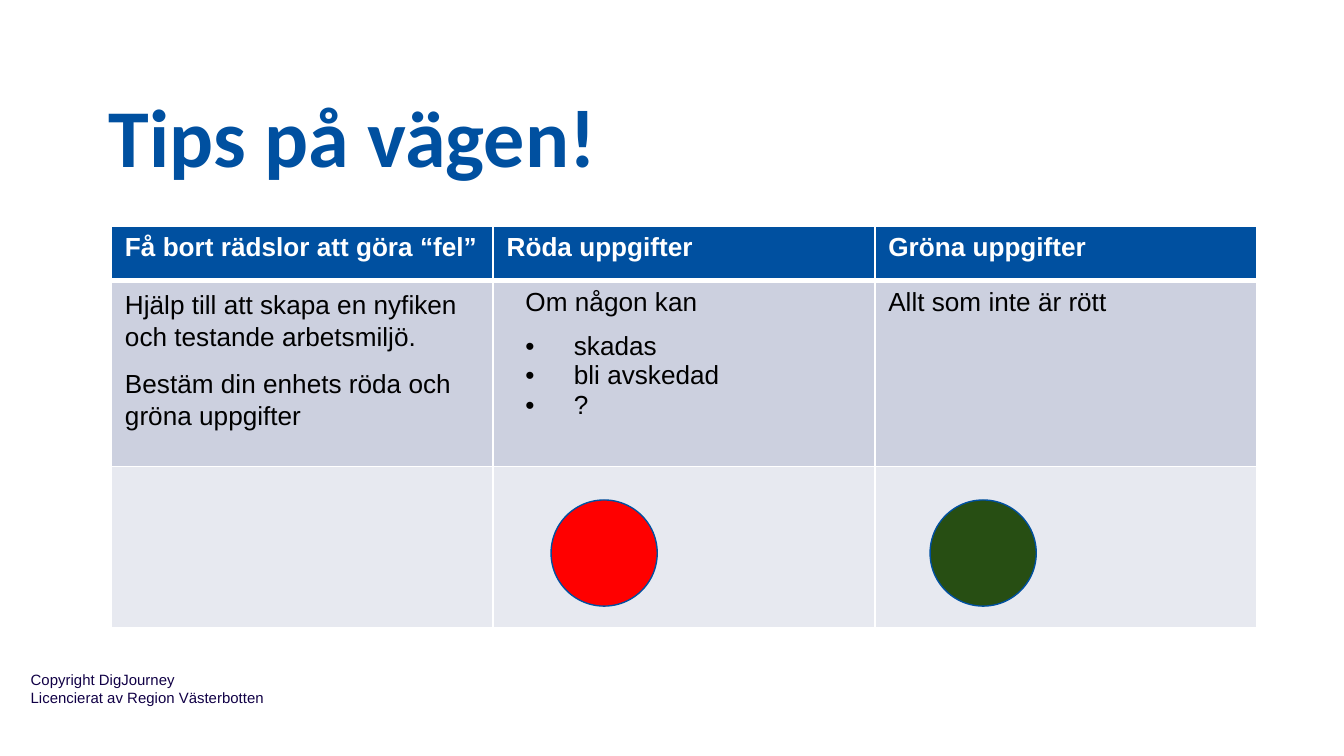
from dataclasses import dataclass

from lxml.etree import SubElement
from pptx import Presentation
from pptx.dml.color import RGBColor
from pptx.enum.shapes import MSO_SHAPE
from pptx.enum.text import MSO_ANCHOR
from pptx.oxml.ns import qn
from pptx.util import Inches, Pt


@dataclass(frozen=True)
class Theme:
    blue: str = "0050A0"
    white: str = "FFFFFF"
    black: str = "000000"
    footer: str = "110046"
    body_fill: str = "CCD0DF"
    signal_fill: str = "E7E9F0"
    red: str = "FF0000"
    green: str = "274E13"
    title_font: str = "Calibri"
    body_font: str = "Arial"
    title_size: int = 44
    body_size: int = 14
    footer_size: int = 8


THEME = Theme()
WIDTH = 10
HEIGHT = WIDTH * 9 / 16
TABLE_LEFT, TABLE_TOP = 0.83, 1.68
COLUMN_WIDTH = 2.84
ROW_HEIGHTS = (0.41, 1.38, 1.2)
CIRCLE_LEFT, CIRCLE_TOP = 4.1, 3.72
CIRCLE_SIZE, CIRCLE_STEP = 0.79, 2.82

HEADINGS = ("Få bort rädslor att göra “fel”", "Röda uppgifter", "Gröna uppgifter")
ADVICE = (
    "Hjälp till att skapa en nyfiken och testande arbetsmiljö.",
    "Bestäm din enhets röda och gröna uppgifter",
)
RISKS = ("skadas", "bli avskedad", "?")


def color(value):
    return RGBColor.from_string(value)


def add_span(paragraph, text, size, ink, font=THEME.body_font, bold=False):
    span = paragraph.add_run()
    span.text = text
    span.font.name = font
    span.font.size = Pt(size)
    span.font.bold = bold
    span.font.color.rgb = color(ink)


def next_paragraph(frame):
    first = frame.paragraphs[0]
    return frame.add_paragraph() if first.runs else first


def add_box(page, left, top, width, height, inset, anchor=MSO_ANCHOR.TOP):
    box = page.shapes.add_textbox(Inches(left), Inches(top), Inches(width), Inches(height))
    frame = box.text_frame
    frame.word_wrap = True
    frame.vertical_anchor = anchor
    frame.margin_left = frame.margin_right = Inches(inset)
    frame.margin_top = frame.margin_bottom = Inches(inset)
    return frame


def add_cell_text(cell, text, ink=THEME.black, bold=False):
    paragraph = next_paragraph(cell.text_frame)
    add_span(paragraph, text, THEME.body_size, ink, bold=bold)
    return paragraph


def set_indent(paragraph, margin, first_line=0, bullet=False):
    properties = paragraph._p.get_or_add_pPr()
    properties.set("marL", str(Inches(margin)))
    properties.set("indent", str(Inches(first_line)))
    if bullet:
        tint = SubElement(properties, qn("a:buClr"))
        SubElement(tint, qn("a:srgbClr"), val=THEME.black)
        SubElement(properties, qn("a:buSzPct"), val="100000")
        SubElement(properties, qn("a:buFont"), typeface=THEME.body_font)
        SubElement(properties, qn("a:buChar"), char="•")
        paragraph.font.size = Pt(THEME.body_size)


def style_cell(cell, fill, bottom=1):
    properties = cell._tc.get_or_add_tcPr()
    for side, width in (("L", 1), ("R", 1), ("T", 1), ("B", bottom)):
        line = SubElement(properties, qn(f"a:ln{side}"), w=str(Pt(width)))
        SubElement(SubElement(line, qn("a:solidFill")), qn("a:srgbClr"), val=THEME.white)
    cell.fill.solid()
    cell.fill.fore_color.rgb = color(fill)


def add_grid(page):
    columns = len(HEADINGS)
    table = page.shapes.add_table(
        len(ROW_HEIGHTS), columns, Inches(TABLE_LEFT), Inches(TABLE_TOP),
        Inches(columns * COLUMN_WIDTH), Inches(sum(ROW_HEIGHTS)),
    ).table
    table.horz_banding = False
    for column in table.columns:
        column.width = Inches(COLUMN_WIDTH)
    styles = ((THEME.blue, 3), (THEME.body_fill, 1), (THEME.signal_fill, 1))
    for row, height, (fill, bottom) in zip(table.rows, ROW_HEIGHTS, styles):
        row.height = Inches(height)
        for cell in row.cells:
            style_cell(cell, fill, bottom)
    return table


def fill_grid(table):
    for column, heading in enumerate(HEADINGS):
        add_cell_text(table.cell(0, column), heading, THEME.white, bold=True)
    for position, advice in enumerate(ADVICE):
        paragraph = add_cell_text(table.cell(1, 0), advice)
        paragraph.line_spacing = 1.1
        if position:
            paragraph.space_before = Pt(8)
    risk_cell = table.cell(1, 1)
    set_indent(add_cell_text(risk_cell, "Om någon kan"), 0.14)
    for position, risk in enumerate(RISKS):
        paragraph = add_cell_text(risk_cell, risk)
        paragraph.space_before = Pt(0 if position else 8)
        set_indent(paragraph, 0.5, -0.36, bullet=True)
    add_cell_text(table.cell(1, 2), "Allt som inte är rött")


def add_circle(page, left, fill):
    circle = page.shapes.add_shape(
        MSO_SHAPE.OVAL, Inches(left), Inches(CIRCLE_TOP),
        Inches(CIRCLE_SIZE), Inches(CIRCLE_SIZE),
    )
    circle.shadow.inherit = False
    circle.fill.solid()
    circle.fill.fore_color.rgb = color(fill)
    circle.line.color.rgb = color(THEME.blue)
    circle.line.width = Pt(0.75)


def main():
    deck = Presentation()
    deck.slide_width, deck.slide_height = Inches(WIDTH), Inches(HEIGHT)
    page = deck.slides.add_slide(deck.slide_layouts[6])

    footer = add_box(page, 0.13, 4.89, 3.28, 0.47, 0.1)
    for text in ("Copyright DigJourney", "Licencierat av Region Västerbotten"):
        add_span(next_paragraph(footer), text, THEME.footer_size, THEME.footer)

    title = add_box(page, 0.78, 0.38, 7.44, 1.02, 0.03, MSO_ANCHOR.BOTTOM)
    add_span(next_paragraph(title), "Tips på vägen!", THEME.title_size, THEME.blue,
             THEME.title_font, bold=True)

    fill_grid(add_grid(page))
    for position, fill in enumerate((THEME.red, THEME.green)):
        add_circle(page, CIRCLE_LEFT + position * CIRCLE_STEP, fill)

    deck.save("out.pptx")


if __name__ == "__main__":
    main()
